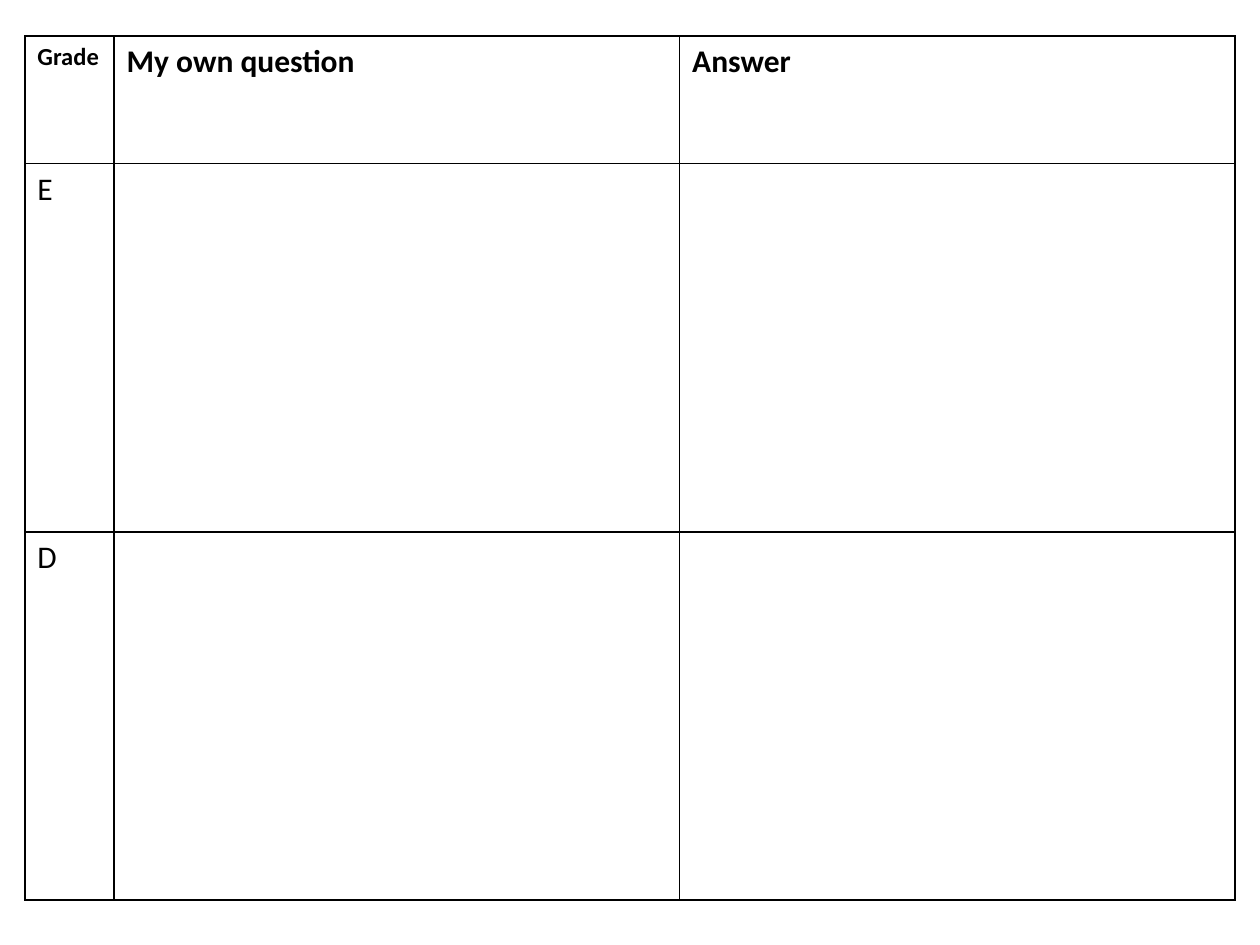
"""Build a slide with a grade, question and answer table."""
from lxml import etree
from pptx import Presentation
from pptx.dml.color import RGBColor
from pptx.oxml.ns import qn
from pptx.util import Cm, Pt

HEADINGS = [("Grade", 14), ("My own question", 18), ("Answer", 18)]
GRADES = ["E", "D"]
GRADE_SIZE = 18
COLUMN_WIDTHS = [1.8, 11.4, 11.2]
HEADING_HEIGHT, GRADE_HEIGHT = 2.57, 7.42
LEFT, TOP = 0.5, 0.73
FONT = "Calibri"
INK, PAPER = "000000", "FFFFFF"
EDGES = ("a:lnL", "a:lnR", "a:lnT", "a:lnB")


def color(value):
    return RGBColor.from_string(value)


def write(cell, text, size, bold):
    run = cell.text_frame.paragraphs[0].add_run()
    run.text = text
    run.font.name = FONT
    run.font.size = Pt(size)
    run.font.bold = bold
    run.font.color.rgb = color(INK)


def style(cell):
    properties = cell._tc.get_or_add_tcPr()
    for edge in EDGES:
        border = etree.SubElement(properties, qn(edge), w=str(Pt(1)))
        ink = etree.SubElement(border, qn("a:solidFill"))
        etree.SubElement(ink, qn("a:srgbClr"), val=INK)
    cell.fill.solid()
    cell.fill.fore_color.rgb = color(PAPER)


def main():
    presentation = Presentation()
    presentation.slide_width, presentation.slide_height = Cm(25.4), Cm(19.05)
    slide = presentation.slides.add_slide(presentation.slide_layouts[6])

    heights = [HEADING_HEIGHT] + [GRADE_HEIGHT] * len(GRADES)
    questions = slide.shapes.add_table(
        len(heights), len(COLUMN_WIDTHS), Cm(LEFT), Cm(TOP),
        Cm(sum(COLUMN_WIDTHS)), Cm(sum(heights))).table
    for column, width in zip(questions.columns, COLUMN_WIDTHS):
        column.width = Cm(width)
    for row, height in zip(questions.rows, heights):
        row.height = Cm(height)
    for cell in questions.iter_cells():
        style(cell)

    for index, (heading, size) in enumerate(HEADINGS):
        write(questions.cell(0, index), heading, size, True)
    for index, grade in enumerate(GRADES, 1):
        write(questions.cell(index, 0), grade, GRADE_SIZE, False)

    presentation.save("out.pptx")


if __name__ == "__main__":
    main()
